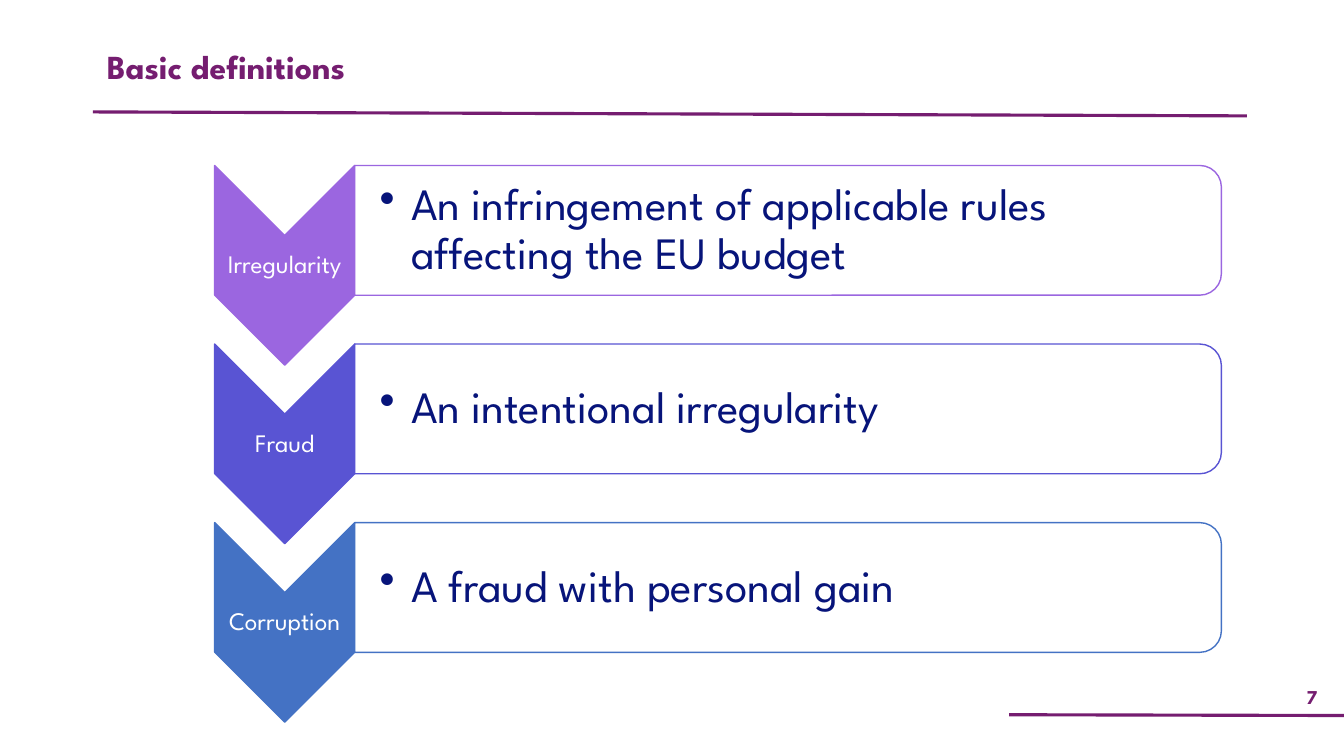
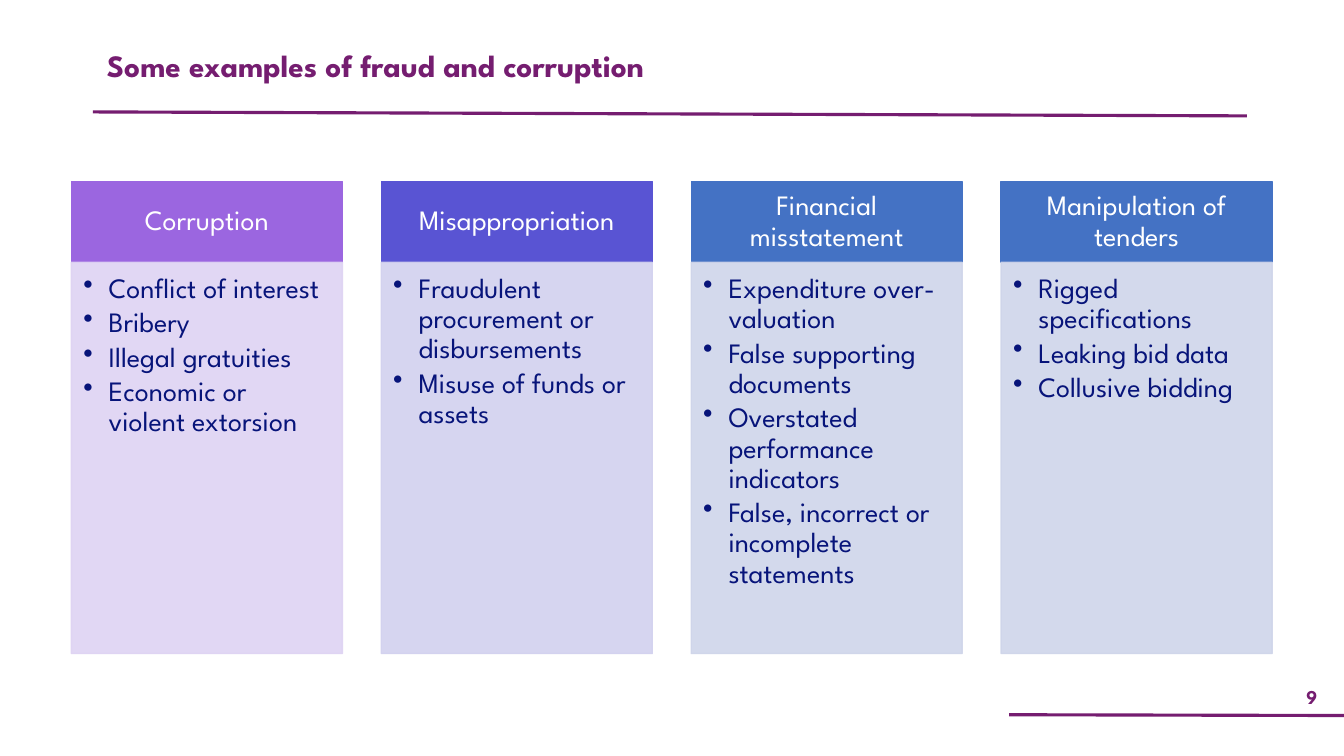
from lxml import etree
from pptx import Presentation
from pptx import util as u
from pptx.dml.color import RGBColor
from pptx.enum import shapes, text
from pptx.oxml.ns import qn

Cm, Pt = u.Cm, u.Pt
SHAPE, ALIGN, ANCHOR = shapes.MSO_SHAPE, text.PP_ALIGN, text.MSO_ANCHOR

FONT = "League Spartan"
PLUM, NAVY, WHITE = "751D70", "07147A", "FFFFFF"
PURPLE, INDIGO, BLUE = "9B66E0", "5954D3", "4472C4"
TINTS = {PURPLE: "DED3F3", INDIGO: "D2D1EF", BLUE: "CFD5EA"}


def rgb(value):
    return RGBColor.from_string(value)


class Deck:
    """Holds the shared style and the current slide."""

    def __init__(self):
        self.prs = Presentation()
        self.prs.slide_width, self.prs.slide_height = Cm(33.87), Cm(19.05)
        self.s = None

    def slide(self, title, number, size=24):
        self.s = self.prs.slides.add_slide(self.prs.slide_layouts[5])
        # Title
        sp = self.s.shapes.title
        sp.left, sp.top, sp.width, sp.height = Cm(2.44), Cm(1.22), Cm(24.71), Cm(1.07)
        self.set_text(sp, [title], size, PLUM, bold=True, align=ALIGN.JUSTIFY,
                      anchor=ANCHOR.TOP, spacing=0.8)
        # Rules and slide number
        self.rule(2.34, 2.82, 31.42, 2.92)
        self.rule(25.43, 18.01, 33.91, 18.03)
        self.label(32.26, 17.09, 1.6, 0.91, [number], 14, PLUM, bold=True)

    def rule(self, x1, y1, x2, y2):
        line = self.s.shapes.add_connector(
            shapes.MSO_CONNECTOR.STRAIGHT, Cm(x1), Cm(y1), Cm(x2), Cm(y2))
        line.line.color.rgb = rgb(PLUM)
        line.line.width = Pt(2.25)
        etree.SubElement(line.element.spPr, qn("a:effectLst"))

    def box(self, kind, x, y, w, h, fill, line=None, alpha=None, turned=False):
        """Draw a shape in the visible frame; turned rotates it by 90 degrees."""
        if turned:
            x, y, w, h = x + (w - h) / 2, y + (h - w) / 2, h, w
        sp = self.s.shapes.add_shape(kind, Cm(x), Cm(y), Cm(w), Cm(h))
        sp.rotation = 90 if turned else 0
        sp.shadow.inherit = False
        sp.fill.solid()
        sp.fill.fore_color.rgb = rgb(fill)
        sp.line.color.rgb = rgb(line or fill)
        sp.line.width = Pt(1)
        if alpha:
            for color in sp.element.spPr.iter(qn("a:srgbClr")):
                if color.get("val") == fill:
                    etree.SubElement(color, qn("a:alpha"), val=str(alpha * 1000))
        return sp

    def label(self, x, y, w, h, lines, size, color, **style):
        sp = self.s.shapes.add_textbox(Cm(x), Cm(y), Cm(w), Cm(h))
        self.set_text(sp, lines, size, color, **style)

    def set_text(self, sp, lines, size, color, bold=False, align=ALIGN.CENTER,
                 anchor=ANCHOR.MIDDLE, spacing=None, insets=None, bullet=None):
        tf = sp.text_frame
        tf.word_wrap = True
        tf.auto_size = text.MSO_AUTO_SIZE.NONE
        tf.vertical_anchor = anchor
        if insets:
            (tf.margin_left, tf.margin_top,
             tf.margin_right, tf.margin_bottom) = map(Cm, insets)
        for i, line in enumerate(lines):
            p = tf.add_paragraph() if i else tf.paragraphs[0]
            if bullet:
                pPr = p._p.get_or_add_pPr()
                pPr.set("marL", str(Cm(bullet)))
                pPr.set("indent", str(-Cm(bullet)))
                etree.SubElement(pPr, qn("a:buChar"), char="•")
                p.space_after = Pt(size * 0.15)
            p.alignment = align
            if spacing:
                p.line_spacing = spacing
            r = p.add_run()
            r.text = line
            r.font.name, r.font.size, r.font.bold = FONT, Pt(size), bold
            r.font.color.rgb = rgb(color)

    def definition(self, y, name, meaning, color):
        """A downward chevron with its name, and a panel with its meaning."""
        x, w, h, panel_h = 5.41, 3.53, 5.03, 3.27
        self.box(SHAPE.CHEVRON, x, y, w, h, color, turned=True)
        self.label(x, y + w / 2, w, h - w, [name], 18, WHITE,
                   spacing=0.9, insets=[0.03] * 4)
        self.box(SHAPE.ROUND_2_SAME_RECTANGLE, x + w, y, 21.84, panel_h, WHITE,
                 line=color, alpha=90, turned=True)
        self.label(x + w, y, 21.69, panel_h, [meaning], 32, NAVY,
                   align=ALIGN.LEFT, spacing=0.9,
                   insets=(0.63, 0.05, 0.05, 0.05), bullet=0.79)

    def column(self, x, heading, items, color):
        """A heading band above a tinted list."""
        y, w, head_h, body_h = 4.57, 6.83, 2.04, 9.86
        head = self.box(SHAPE.RECTANGLE, x, y, w, head_h, color)
        self.set_text(head, [heading], 20, WHITE, spacing=0.9,
                      insets=(0.41, 0.23, 0.41, 0.23))
        body = self.box(SHAPE.RECTANGLE, x, y + head_h, w, body_h,
                        TINTS[color], alpha=90)
        self.set_text(body, items, 20, NAVY, align=ALIGN.LEFT, anchor=ANCHOR.TOP,
                      spacing=0.9, insets=(0.3, 0.3, 0.41, 0.43), bullet=0.64)


def main():
    deck = Deck()

    # Definitions
    deck.slide("Basic definitions", "7")
    definitions = [
        ("Irregularity", "An infringement of applicable rules affecting the EU budget", PURPLE),
        ("Fraud", "An intentional irregularity", INDIGO),
        ("Corruption", "A fraud with personal gain", BLUE),
    ]
    for i, definition in enumerate(definitions):
        deck.definition(4.17 + 4.5 * i, *definition)

    # Examples
    deck.slide("Some examples of fraud and corruption", "9", size=22.2)
    columns = [
        ("Corruption", ["Conflict of interest", "Bribery", "Illegal gratuities",
                        "Economic or violent extorsion"], PURPLE),
        ("Misappropriation", ["Fraudulent procurement or disbursements",
                              "Misuse of funds or assets"], INDIGO),
        ("Financial misstatement", ["Expenditure over-valuation",
                                    "False supporting documents",
                                    "Overstated performance indicators",
                                    "False, incorrect or incomplete statements"], BLUE),
        ("Manipulation of tenders", ["Rigged specifications", "Leaking bid data",
                                     "Collusive bidding"], BLUE),
    ]
    for i, column in enumerate(columns):
        deck.column(1.8 + 7.81 * i, *column)

    deck.prs.save("out.pptx")


if __name__ == "__main__":
    main()
